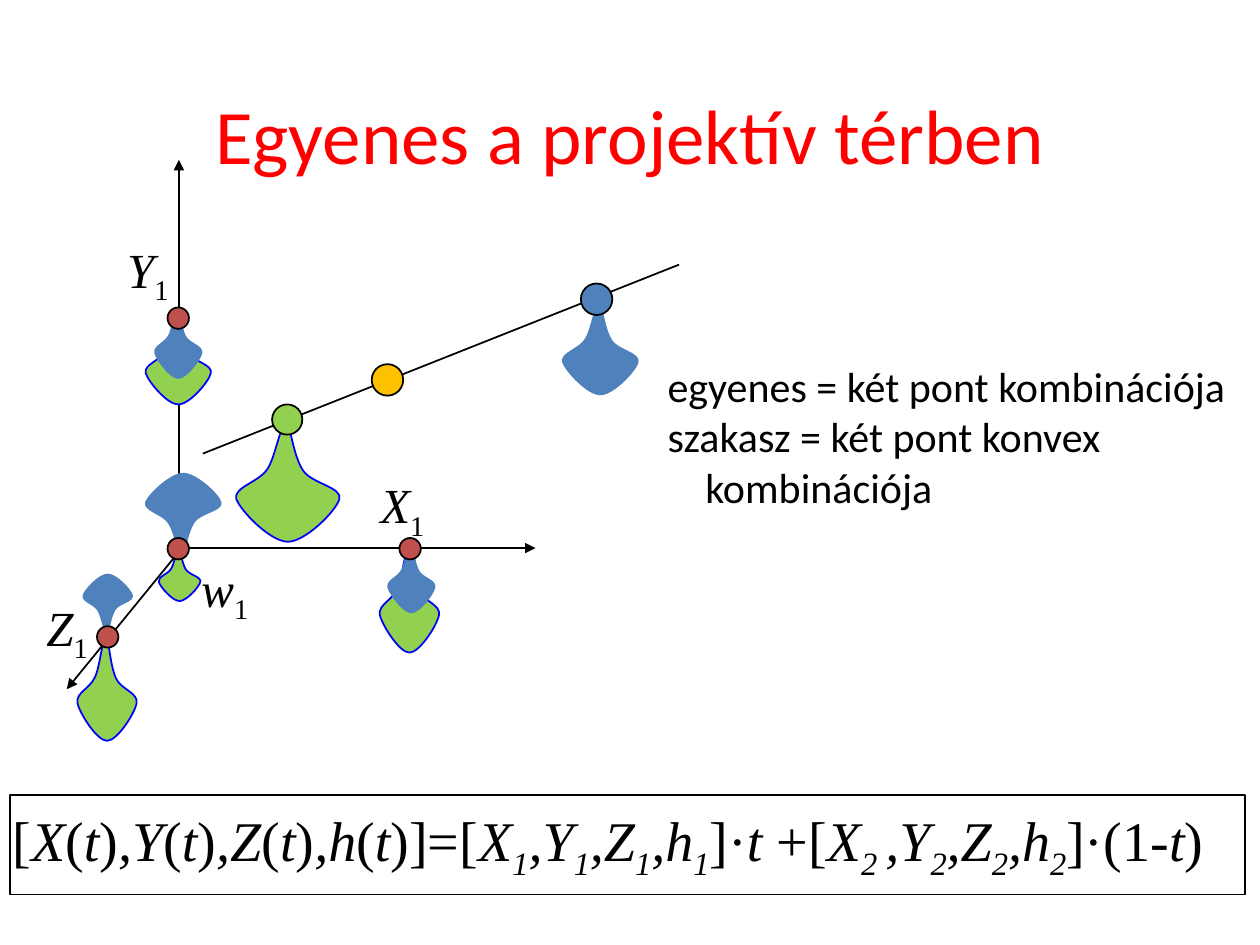
from dataclasses import dataclass

import pptx
import pptx.dml.color
import pptx.enum.shapes
import pptx.enum.text
import pptx.oxml
import pptx.oxml.ns
import pptx.util
from pptx.util import Inches

BLACK, RED, GREEN, BLUE = "000000", "C0504D", "92D050", "4F81BD"
SERIF, SANS = "Times New Roman", "Calibri"
DROP_START = (50, 0)
DROP_CURVES = [
    ((42, 1), (39, 29), (31, 39)),
    ((23, 50), (0, 54), (3, 64)),
    ((7, 74), (34, 100), (50, 100)),
    ((66, 100), (94, 74), (97, 64)),
    ((100, 54), (72, 51), (64, 40)),
    ((56, 29), (53, 8), DROP_START),
]


@dataclass
class Drop:
    left: float
    top: float
    width: float
    height: float
    fill: str
    outline: str
    upward: bool = False


@dataclass
class Ball:
    left: float
    top: float
    size: float
    fill: str


@dataclass
class Stroke:
    start: tuple[float, float]
    end: tuple[float, float]
    arrow: bool = True


@dataclass
class Label:
    letter: str
    left: float
    top: float
    width: float


@dataclass
class Piece:
    text: str
    italic: bool = False
    subscript: bool = False


def rgb(color: str):
    return pptx.dml.color.RGBColor.from_string(color)


def set_outline(line, color: str) -> None:
    line.color.rgb = rgb(color)
    line.width = pptx.util.Pt(1)


def add_stroke(slide, stroke: Stroke) -> None:
    ends = [Inches(value) for value in stroke.start + stroke.end]
    connector = slide.shapes.add_connector(pptx.enum.shapes.MSO_CONNECTOR.STRAIGHT, *ends)
    set_outline(connector.line, BLACK)
    properties = connector._element.spPr
    if stroke.arrow:
        line = properties.find(pptx.oxml.ns.qn("a:ln"))
        line.append(pptx.oxml.parse_xml(f'<a:tailEnd {pptx.oxml.ns.nsdecls("a")} type="triangle"/>'))
    properties.append(pptx.oxml.parse_xml(f'<a:effectLst {pptx.oxml.ns.nsdecls("a")}/>'))


def bend_segments(shape, upward: bool) -> None:
    outline = next(shape._element.iter(pptx.oxml.ns.qn("a:path")))
    outline.set("w", "100")
    outline.set("h", "100")
    for command in list(outline):
        outline.remove(command)
    commands = [("moveTo", [DROP_START])] + [("cubicBezTo", curve) for curve in DROP_CURVES] + [("close", [])]
    for tag, points in commands:
        inner = "".join(f'<a:pt x="{x}" y="{100 - y if upward else y}"/>' for x, y in points)
        outline.append(pptx.oxml.parse_xml(f'<a:{tag} {pptx.oxml.ns.nsdecls("a")}>{inner}</a:{tag}>'))


def add_drop(slide, drop: Drop) -> None:
    builder = slide.shapes.build_freeform(*DROP_START)
    builder.add_line_segments([curve[-1] for curve in DROP_CURVES], close=True)
    shape = builder.convert_to_shape()
    bend_segments(shape, drop.upward)
    shape.left, shape.top = Inches(drop.left), Inches(drop.top)
    shape.width, shape.height = Inches(drop.width), Inches(drop.height)
    shape.shadow.inherit = False
    shape.fill.solid()
    shape.fill.fore_color.rgb = rgb(drop.fill)
    set_outline(shape.line, drop.outline)


def add_ball(slide, ball: Ball) -> None:
    shape = slide.shapes.add_shape(
        pptx.enum.shapes.MSO_SHAPE.OVAL,
        Inches(ball.left), Inches(ball.top), Inches(ball.size), Inches(ball.size))
    shape.shadow.inherit = False
    shape.fill.solid()
    shape.fill.fore_color.rgb = rgb(ball.fill)
    set_outline(shape.line, BLACK)


def add_text_frame(slide, left: float, top: float, width: float, height: float, wrap: bool = True):
    frame = slide.shapes.add_textbox(Inches(left), Inches(top), Inches(width), Inches(height)).text_frame
    frame.word_wrap = wrap
    frame.auto_size = pptx.enum.text.MSO_AUTO_SIZE.SHAPE_TO_FIT_TEXT
    return frame


def add_piece(paragraph, piece: Piece, size: int, font: str, color: str = BLACK) -> None:
    run = paragraph.add_run()
    run.text = piece.text
    run.font.size = pptx.util.Pt(size)
    run.font.name = font
    run.font.color.rgb = rgb(color)
    run.font.italic = piece.italic
    if piece.subscript:
        run.font._element.set("baseline", "-25000")


def add_label(slide, label: Label) -> None:
    paragraph = add_text_frame(slide, label.left, label.top, label.width, 0.57, wrap=False).paragraphs[0]
    for piece in (Piece(label.letter, italic=True), Piece("1", subscript=True)):
        add_piece(paragraph, piece, 28, SERIF)


def formula_pieces() -> list[Piece]:
    coordinates = ["X", ",Y", ",Z", ",h"]
    pieces = [Piece("[")]
    for name in coordinates:
        closing = ")]=[" if name == ",h" else ")"
        pieces += [Piece(name, True), Piece("("), Piece("t", True), Piece(closing)]
    for name in coordinates:
        pieces += [Piece(name, True), Piece("1", True, True)]
    pieces += [Piece("]·"), Piece("t ", True), Piece("+[")]
    for name in coordinates:
        pieces += [Piece(name, True), Piece("2 " if name == "X" else "2", True, True)]
    return pieces + [Piece("]·(1-"), Piece("t", True), Piece(")")]


def main() -> None:
    presentation = pptx.Presentation()
    presentation.slide_width, presentation.slide_height = Inches(10), Inches(7.5)
    slide = presentation.slides.add_slide(presentation.slide_layouts[5])

    title = slide.shapes.title
    title.left, title.top, title.width, title.height = map(Inches, (0.75, 0.44, 8.5, 1.25))
    title.text_frame.vertical_anchor = pptx.enum.text.MSO_ANCHOR.MIDDLE
    heading = title.text_frame.paragraphs[0]
    heading.alignment = pptx.enum.text.PP_ALIGN.CENTER
    add_piece(heading, Piece("Egyenes a projektív térben"), 44, SANS, "FF0000")

    definitions = add_text_frame(slide, 5.2, 2.81, 4.8, 1.31)
    add_piece(definitions.paragraphs[0], Piece("egyenes = két pont kombinációja"), 24, SANS)
    segment = definitions.add_paragraph()
    add_piece(segment, Piece("szakasz = két pont konvex kombinációja"), 24, SANS)
    hanging = Inches(0.3)
    segment_properties = segment._p.get_or_add_pPr()
    segment_properties.set("marL", str(hanging))
    segment_properties.set("indent", str(-hanging))

    formula = add_text_frame(slide, 0, 6.34, 10.36, 0.63).paragraphs[0]
    for piece in formula_pieces():
        add_piece(formula, piece, 32, SERIF)
    formula_border = slide.shapes.add_shape(
        pptx.enum.shapes.MSO_SHAPE.RECTANGLE, *map(Inches, (0.08, 6.31, 9.8, 0.79)))
    formula_border.shadow.inherit = False
    formula_border.fill.background()
    set_outline(formula_border.line, BLACK)

    origin = (1.42, 4.35)
    add_stroke(slide, Stroke(origin, (1.42, 1.27)))
    first_point_weights = [(1.25, 4.35, 0.35, 0.42), (3, 4.35, 0.5, 0.83), (1.14, 2.52, 0.55, 0.69),
                           (1.85, 3.36, 0.87, 0.94), (0.6, 5.05, 0.5, 0.83)]
    for box in first_point_weights:
        add_drop(slide, Drop(*box, GREEN, "0000FF"))
    for label in (Label("X", 2.92, 3.72, 0.57), Label("Y", 0.91, 1.85, 0.55),
                  Label("w", 1.5, 4.38, 0.59), Label("Z", 0.27, 4.69, 0.55)):
        add_label(slide, label)
    for stroke in (Stroke(origin, (4.25, 4.35)), Stroke((1.61, 3.6), (5.39, 2.1), arrow=False),
                   Stroke((1.46, 4.33), (0.53, 5.47))):
        add_stroke(slide, stroke)
    second_point_weights = [(4.45, 2.42, 0.63, 0.71, False), (1.14, 3.76, 0.63, 0.63, True),
                            (3.07, 4.31, 0.39, 0.55, False), (1.22, 2.45, 0.39, 0.55, False),
                            (0.65, 4.56, 0.41, 0.46, True)]
    for *box, upward in second_point_weights:
        add_drop(slide, Drop(*box, BLUE, BLUE, upward))

    for ball in (Ball(2.95, 2.89, 0.25, "FFC000"), Ball(2.16, 3.21, 0.24, GREEN), Ball(4.61, 2.25, 0.25, BLUE)):
        add_ball(slide, ball)
    for corner in ((0.77, 4.97), (3.17, 4.27), (1.33, 4.27), (1.33, 2.44)):
        add_ball(slide, Ball(*corner, 0.17, RED))

    presentation.save("out.pptx")


if __name__ == "__main__":
    main()
